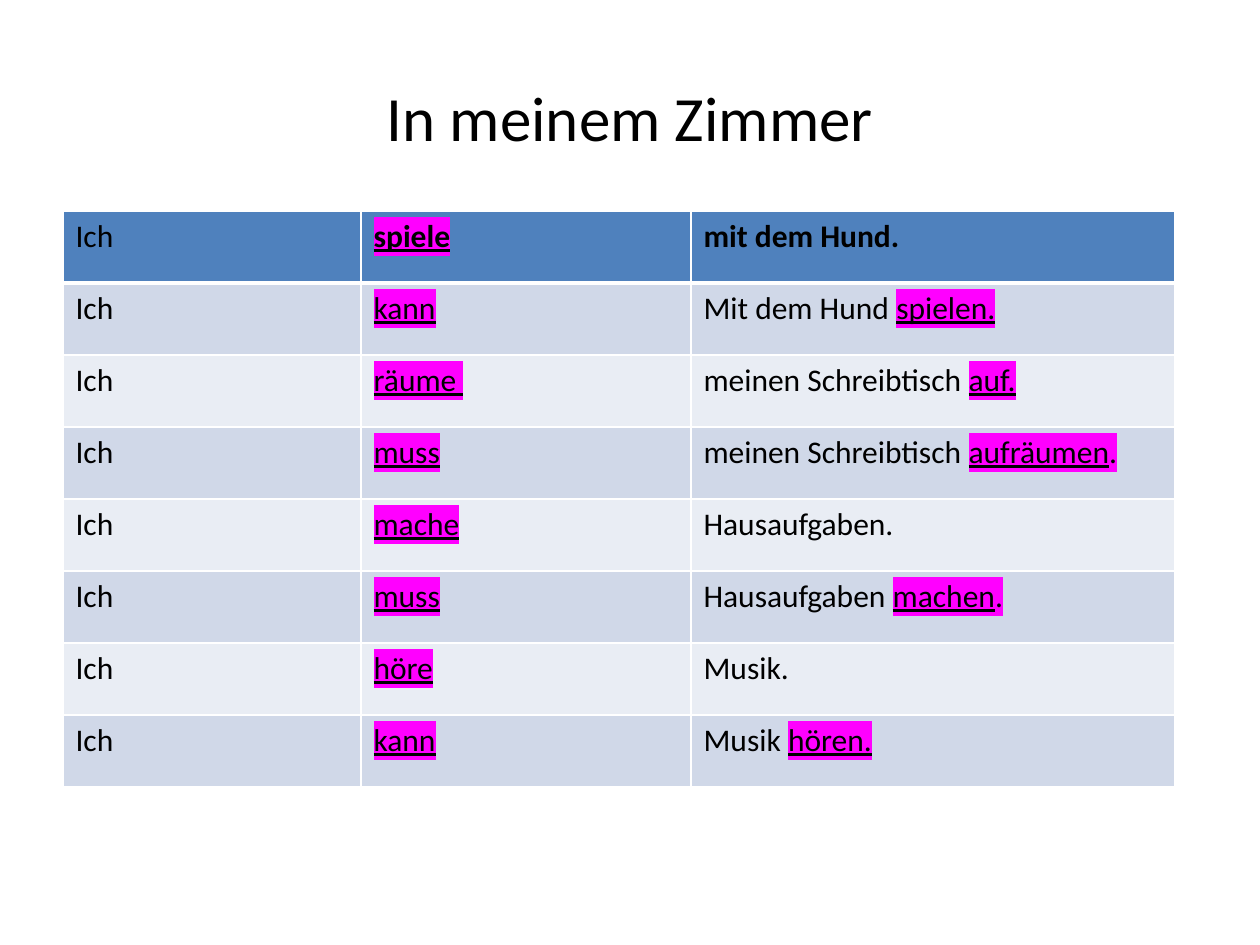
from lxml.etree import SubElement
from pptx import Presentation
from pptx.dml.color import RGBColor
from pptx.enum.text import MSO_ANCHOR, PP_ALIGN
from pptx.oxml.ns import qn
from pptx.util import Emu, Pt

SCALE = 914400 // 126
FONT = "Calibri"
COLORS = {
    "text": "000000",
    "header": "4F81BD",
    "odd": "D0D8E8",
    "even": "E9EDF4",
    "border": "FFFFFF",
    "verb": "FF00FF",
}
COLUMNS = [298, 330, 484]
ROW_HEIGHT = 72
SENTENCES = [
    ("spiele", "mit dem Hund."),
    ("kann", "Mit dem Hund ", "spielen."),
    ("räume ", "meinen Schreibtisch ", "auf."),
    ("muss", "meinen Schreibtisch ", "aufräumen", "."),
    ("mache", "Hausaufgaben."),
    ("muss", "Hausaufgaben ", "machen", "."),
    ("höre", "Musik."),
    ("kann", "Musik ", "hören."),
]


def px(n):
    return Emu(n * SCALE)


def set_font(p, size, bold=False):
    p.font.name = FONT
    p.font.size = Pt(size)
    p.font.bold = bold
    p.font.color.rgb = RGBColor.from_string(COLORS["text"])


def add_run(p, text, underline=False, highlight=False):
    r = p.add_run()
    r.text = text
    if underline:
        r.font.underline = True
    if highlight:
        mark = SubElement(r.font._element, qn("a:highlight"))
        SubElement(mark, qn("a:srgbClr"), val=COLORS["verb"])


def set_borders(cell, bottom):
    tcPr = cell._tc.get_or_add_tcPr()
    for i, (side, width) in enumerate(zip("LRTB", (1, 1, 1, bottom))):
        ln = tcPr.makeelement(qn(f"a:ln{side}"), {"w": str(Pt(width))})
        fill = SubElement(ln, qn("a:solidFill"))
        SubElement(fill, qn("a:srgbClr"), val=COLORS["border"])
        tcPr.insert(i, ln)


def fill_cell(cell, runs, color, bold, bottom):
    cell.fill.solid()
    cell.fill.fore_color.rgb = RGBColor.from_string(COLORS[color])
    set_borders(cell, bottom)
    p = cell.text_frame.paragraphs[0]
    for run in runs:
        add_run(p, *run)
    set_font(p, 18, bold)


def add_title(s, text):
    title = s.shapes.title
    title.left, title.top, title.width, title.height = map(px, (63, 38, 1134, 157))
    tf = title.text_frame
    tf.vertical_anchor = MSO_ANCHOR.MIDDLE
    p = tf.paragraphs[0]
    p.text = text
    p.alignment = PP_ALIGN.CENTER
    set_font(p, 36)


def add_sentences(s):
    table = s.shapes.add_table(
        len(SENTENCES), len(COLUMNS), px(63), px(211),
        px(sum(COLUMNS)), px(ROW_HEIGHT * len(SENTENCES)),
    ).table
    table.first_row = False
    for column, width in zip(table.columns, COLUMNS):
        column.width = px(width)
    for i, (verb, *rest) in enumerate(SENTENCES):
        header = i == 0
        color = "header" if header else "odd" if i % 2 else "even"
        ending = [(text, j == 1, j > 0) for j, text in enumerate(rest)]
        contents = [[("Ich",)], [(verb, True, True)], ending]
        for j, runs in enumerate(contents):
            bold = header and j > 0
            fill_cell(table.cell(i, j), runs, color, bold, 3 if header else 1)


def main():
    prs = Presentation()
    prs.slide_width, prs.slide_height = px(1260), px(945)
    s = prs.slides.add_slide(prs.slide_layouts[5])
    add_title(s, "In meinem Zimmer")
    add_sentences(s)
    prs.save("out.pptx")


if __name__ == "__main__":
    main()
